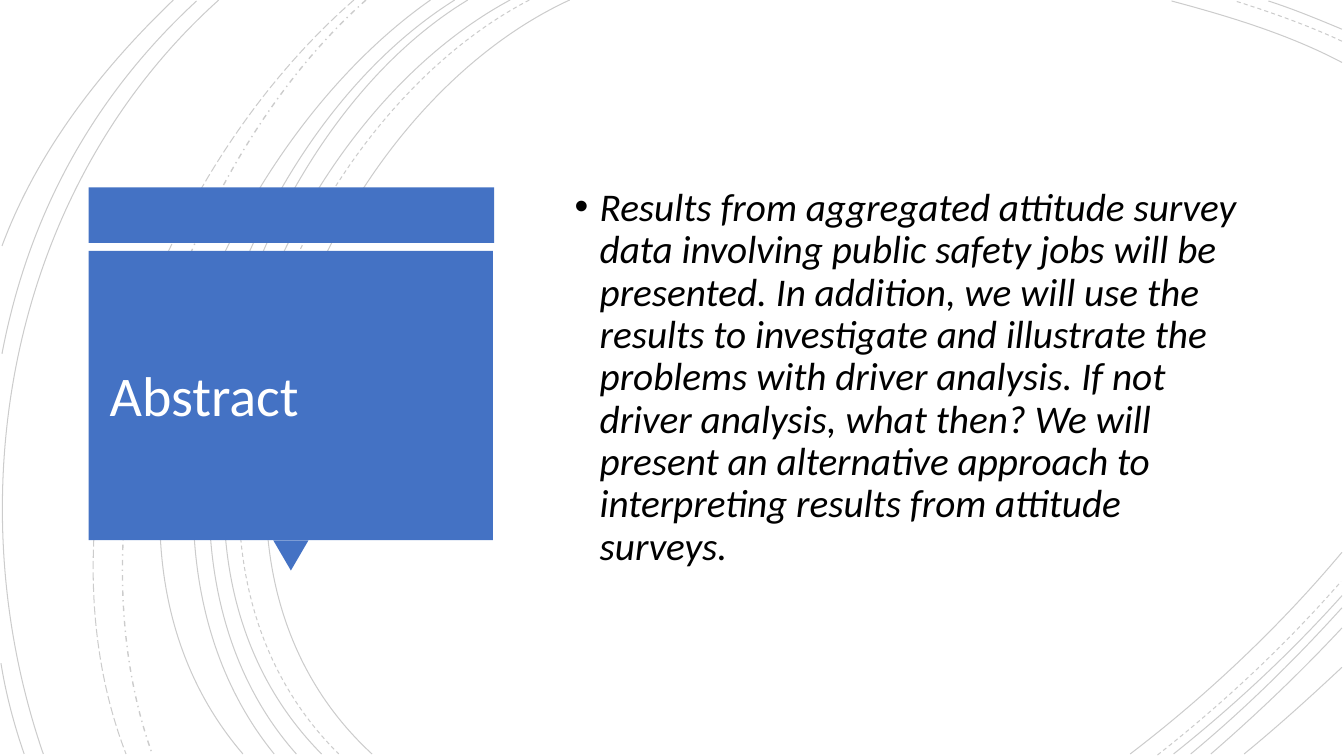
"""Build the abstract slide: curved line backdrop, blue callout and italic summary."""
from lxml.etree import SubElement
from pptx import Presentation
from pptx.dml.color import RGBColor
from pptx.enum.dml import MSO_LINE
from pptx.enum.shapes import MSO_SHAPE
from pptx.enum.text import MSO_ANCHOR
from pptx.oxml.ns import qn
from pptx.util import Cm, Pt

FONT, BLUE, BLACK, WHITE = "Calibri", "4472C4", "000000", "FFFFFF"
TITLE = "Abstract"
SUMMARY = (
    "Results from aggregated attitude survey data involving public safety jobs will be "
    "presented. In addition, we will use the results to investigate and illustrate the "
    "problems with driver analysis. If not driver analysis, what then? We will present an "
    "alternative approach to interpreting results from attitude surveys."
)
SOLID, DASH = MSO_LINE.SOLID, MSO_LINE.DASH
LONG_DASH, DASH_DOT = MSO_LINE.LONG_DASH, MSO_LINE.DASH_DOT

# Each arc: start, two control points and end in inches
ARCS = [
    (SOLID, 0.75, [(5.65, 0), (3.15, 1.15), (1.43, 5.4), (3.69, 7.48)]),
    (SOLID, 0.75, [(13.31, 0.62), (12.78, 0.34), (12.18, 0.16), (11.62, 0.01)]),
    (SOLID, 0.75, [(11.21, 7.48), (11.97, 6.9), (12.69, 6.22), (13.31, 5.48)]),
    (DASH, 0.75, [(5.25, 0), (2.85, 1.25), (1.23, 5.37), (3.36, 7.48)]),
    (DASH, 0.75, [(13.31, 0.41), (12.97, 0.25), (12.6, 0.12), (12.25, 0.01)]),
    (DASH, 0.75, [(11.48, 7.49), (12.13, 6.98), (12.75, 6.4), (13.3, 5.77)]),
    (SOLID, 0.75, [(5.06, 0), (2.7, 1.27), (1.1, 5.37), (3.19, 7.48)]),
    (SOLID, 0.75, [(13.31, 0.29), (13.07, 0.19), (12.83, 0.09), (12.58, 0.01)]),
    (SOLID, 0.75, [(11.64, 7.48), (12.23, 7.01), (12.8, 6.48), (13.31, 5.91)]),
    (SOLID, 0.75, [(4.64, 0), (2.44, 1.33), (1.1, 5.41), (2.94, 7.48)]),
    (SOLID, 0.75, [(11.81, 7.48), (12.34, 7.04), (12.84, 6.55), (13.31, 6.03)]),
    (SOLID, 0.75, [(4.51, 0), (2.31, 1.38), (0.97, 5.33), (2.72, 7.48)]),
    (SOLID, 0.75, [(12.01, 7.48), (12.46, 7.09), (12.9, 6.67), (13.31, 6.23)]),
    (SOLID, 0.75, [(4.27, 0), (2.17, 1.47), (0.53, 5.29), (2.41, 7.48)]),
    (SOLID, 0.75, [(12.34, 7.48), (12.67, 7.21), (12.99, 6.92), (13.31, 6.62)]),
    (DASH_DOT, 1, [(3.63, 0), (1.76, 1.66), (0.65, 5.09), (1.51, 7.48)]),
    (LONG_DASH, 0.75, [(3.51, 0), (1.57, 1.69), (0.29, 4.99), (1.25, 7.48)]),
    (SOLID, 0.75, [(2.17, 0), (0.11, 1.85), (-0.46, 4.9), (0.43, 7.48)]),
    (SOLID, 0.75, [(1.95, 0.01), (0.92, 0.96), (0.28, 2.14), (0.02, 3.51)]),
    (SOLID, 0.75, [(0.01, 6.58), (0.06, 6.89), (0.14, 7.19), (0.24, 7.48)]),
    (SOLID, 0.75, [(1.72, 0), (1, 0.69), (0.37, 1.5), (0.02, 2.44)]),
]
CALLOUT = [
    (MSO_SHAPE.RECTANGLE, (0.88, 1.86, 4.02, 0.55), 0),
    (MSO_SHAPE.ISOSCELES_TRIANGLE, (2.71, 5.36, 0.35, 0.3), 180),
    (MSO_SHAPE.RECTANGLE, (0.88, 2.49, 4.01, 2.87), 0),
]


def inches(*values):
    return [Cm(value * 2.54) for value in values]


def paint(target, color):
    target.solid()
    target.fore_color.rgb = RGBColor.from_string(color)


def add_arc(page, dash, width, points):
    start, *others = [tuple(inches(*point)) for point in points]
    builder = page.shapes.build_freeform(*start)
    builder.add_line_segments(others, close=False)
    arc = builder.convert_to_shape()
    arc.shadow.inherit = False
    arc.fill.background()
    paint(arc.line.fill, BLACK)
    arc.line.width, arc.line.dash_style = Pt(width), dash
    color = next(arc.line._ln.iter(qn("a:srgbClr")))
    SubElement(color, qn("a:alpha"), val="20000")
    outline = next(arc._element.iter(qn("a:path")))
    curve = SubElement(outline, qn("a:cubicBezTo"))
    for segment in outline.findall(qn("a:lnTo")):
        curve.append(segment[0])
        outline.remove(segment)


def add_callout_part(page, kind, area, turn):
    part = page.shapes.add_shape(kind, *inches(*area))
    part.shadow.inherit = False
    part.rotation = turn
    paint(part.fill, BLUE)
    part.line.fill.background()


def add_text(page, area, text, size, color, italic=False):
    box = page.shapes.add_textbox(*inches(*area))
    frame = box.text_frame
    frame.word_wrap = True
    frame.vertical_anchor = MSO_ANCHOR.MIDDLE
    para = frame.paragraphs[0]
    para.line_spacing = 0.9
    span = para.add_run()
    span.text = text
    span.font.name, span.font.size, span.font.italic = FONT, Pt(size), italic
    paint(span.font.fill, color)
    return para


def add_bullet(para):
    para.space_before = Pt(10)
    indent = Cm(0.25 * 2.54)
    properties = para._p.get_or_add_pPr()
    properties.set("marL", str(indent))
    properties.set("indent", str(-indent))
    SubElement(properties, qn("a:buFont"), typeface="Arial")
    SubElement(properties, qn("a:buChar"), char="•")


def main():
    deck = Presentation()
    deck.slide_width, deck.slide_height = inches(13.33, 7.5)
    page = deck.slides.add_slide(deck.slide_layouts[6])
    paint(page.background.fill, WHITE)
    for arc in ARCS:
        add_arc(page, *arc)
    for part in CALLOUT:
        add_callout_part(page, *part)
    add_text(page, (0.99, 2.64, 3.77, 2.62), TITLE, 40, WHITE)
    add_bullet(add_text(page, (5.6, 0.88, 6.87, 5.74), SUMMARY, 28, BLACK, italic=True))
    deck.save("out.pptx")


if __name__ == "__main__":
    main()
